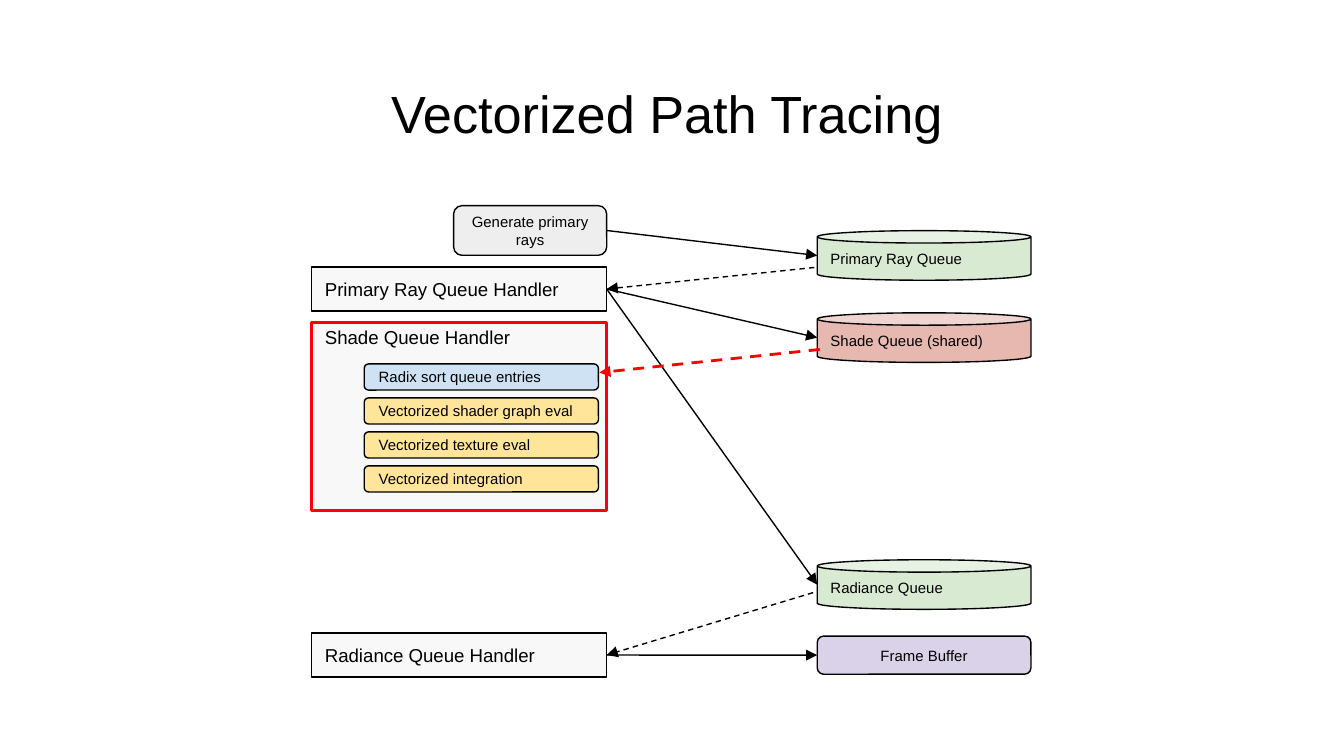
from lxml import etree
from pptx import Presentation
from pptx import util as u
from pptx.dml.color import RGBColor
from pptx.enum import dml, shapes, text
from pptx.oxml.ns import qn

Pt = u.Pt
KINDS = shapes.MSO_SHAPE
MIDDLE = text.MSO_ANCHOR.MIDDLE
LEFT, CENTER = text.PP_ALIGN.LEFT, text.PP_ALIGN.CENTER
RIGHT_SIDE, LEFT_SIDE = 3, 1
HANDLER_X, HANDLER_W = 167, 158
QUEUE_X, QUEUE_W, QUEUE_H = 437.8, 114.5, 26.6
STEP_X, STEP_Y, STEP_W, STEP_H, STEP_PITCH = 195.1, 195, 125.5, 14, 18.2
STEPS = [
    ("Radix sort queue entries", "CFE2F3"),
    ("Vectorized shader graph eval", "FFE599"),
    ("Vectorized texture eval", "FFE599"),
    ("Vectorized integration", "FFE599"),
]


def rgb(value):
    """Return the colour for a hex string."""
    return RGBColor.from_string(value)


def apply(obj, formats):
    """Set each attribute named in a dict of formats."""
    for name, value in formats.items():
        setattr(obj, name, value)


def write(sp, words, size, align=LEFT, anchor=MIDDLE, top=0):
    """Write one formatted paragraph into a shape."""
    tf = sp.text_frame
    apply(tf, {"word_wrap": True, "auto_size": text.MSO_AUTO_SIZE.NONE,
               "vertical_anchor": anchor, "margin_left": Pt(7.2),
               "margin_right": Pt(7.2), "margin_top": Pt(top),
               "margin_bottom": Pt(0)})
    p = tf.paragraphs[0]
    p.alignment = align
    r = p.add_run()
    r.text = words
    apply(r.font, {"name": "Arial", "size": Pt(size)})
    r.font.color.rgb = rgb("000000")


def add_title(slide, words):
    """Place and fill the title placeholder."""
    sp = slide.shapes.title
    apply(sp, {"left": Pt(202.3), "top": Pt(36.7),
               "width": Pt(314.6), "height": Pt(46.8)})
    write(sp, words, 28)


def add_box(slide, kind, box, words, fill, size=8, line="000000", weight=0.75,
            **layout):
    """Add a labelled preset shape."""
    sp = slide.shapes.add_shape(kind, *map(Pt, box))
    sp.shadow.inherit = False
    sp.fill.solid()
    sp.fill.fore_color.rgb = rgb(fill)
    sp.line.color.rgb = rgb(line)
    sp.line.width = Pt(weight)
    write(sp, words, size, **layout)
    return sp


def add_handler(slide, y, h, words, **options):
    """Add a queue handler in the left column."""
    box = (HANDLER_X, y, HANDLER_W, h)
    return add_box(slide, KINDS.RECTANGLE, box, words, "F8F8F8", 10, **options)


def add_queue(slide, y, words, fill):
    """Add a queue cylinder in the right column."""
    add_box(slide, KINDS.CAN, (QUEUE_X, y, QUEUE_W, QUEUE_H), words, fill)


def add_arrow(slide, start, end, source=None, target=None, dashed=False,
              color="000000", weight=0.75):
    """Add a straight arrow, joined to the facing sides of given boxes."""
    cx = slide.shapes.add_connector(shapes.MSO_CONNECTOR.STRAIGHT,
                                    *map(Pt, start + end))
    if source is not None:
        cx.begin_connect(source, RIGHT_SIDE)
    if target is not None:
        cx.end_connect(target, RIGHT_SIDE if dashed else LEFT_SIDE)
    cx.line.color.rgb = rgb(color)
    cx.line.width = Pt(weight)
    if dashed:
        cx.line.dash_style = dml.MSO_LINE.DASH
    etree.SubElement(cx.line._get_or_add_ln(), qn("a:tailEnd"), type="triangle")
    etree.SubElement(cx._element.spPr, qn("a:effectLst"))


def main():
    """Build the slide and save it."""
    prs = Presentation()
    apply(prs, {"slide_width": Pt(720), "slide_height": Pt(405)})
    slide = prs.slides.add_slide(prs.slide_layouts[5])
    add_title(slide, "Vectorized Path Tracing")

    primary = add_handler(slide, 143, 23.7, "Primary Ray Queue Handler")
    add_handler(slide, 172.8, 100.8, "Shade Queue Handler", line="FF0000",
                weight=1.5, anchor=text.MSO_ANCHOR.TOP, top=2)
    for i, (words, fill) in enumerate(STEPS):
        box = (STEP_X, STEP_Y + i * STEP_PITCH, STEP_W, STEP_H)
        add_box(slide, KINDS.ROUNDED_RECTANGLE, box, words, fill)
    radiance = add_handler(slide, 339.1, 23.7, "Radiance Queue Handler")

    add_queue(slide, 123.6, "Primary Ray Queue", "D9EAD3")
    add_queue(slide, 167.6, "Shade Queue (shared)", "E6B8AF")
    add_queue(slide, 299.9, "Radiance Queue", "D9EAD3")
    rays = add_box(slide, KINDS.ROUNDED_RECTANGLE, (243, 110.2, 82, 26.6),
                   "Generate primary rays", "EEEEEE", align=CENTER)
    frame = add_box(slide, KINDS.ROUNDED_RECTANGLE,
                    (QUEUE_X, 340.8, QUEUE_W, 20.4), "Frame Buffer", "D9D2E9",
                    align=CENTER)

    add_arrow(slide, (325, 123.5), (QUEUE_X, 136.9), rays)
    add_arrow(slide, (325, 154.9), (QUEUE_X, 313.2), primary)
    add_arrow(slide, (325, 154.9), (QUEUE_X, 180.9), primary)
    add_arrow(slide, (325, 351), (QUEUE_X, 351), radiance, frame)
    add_arrow(slide, (436.3, 143.3), (325, 154.9), target=primary, dashed=True)
    add_arrow(slide, (439.2, 187.2), (321.1, 199.6), dashed=True,
              color="FF0000", weight=1.5)
    add_arrow(slide, (435.6, 317.5), (325, 351), target=radiance, dashed=True)
    prs.save("out.pptx")


if __name__ == "__main__":
    main()
